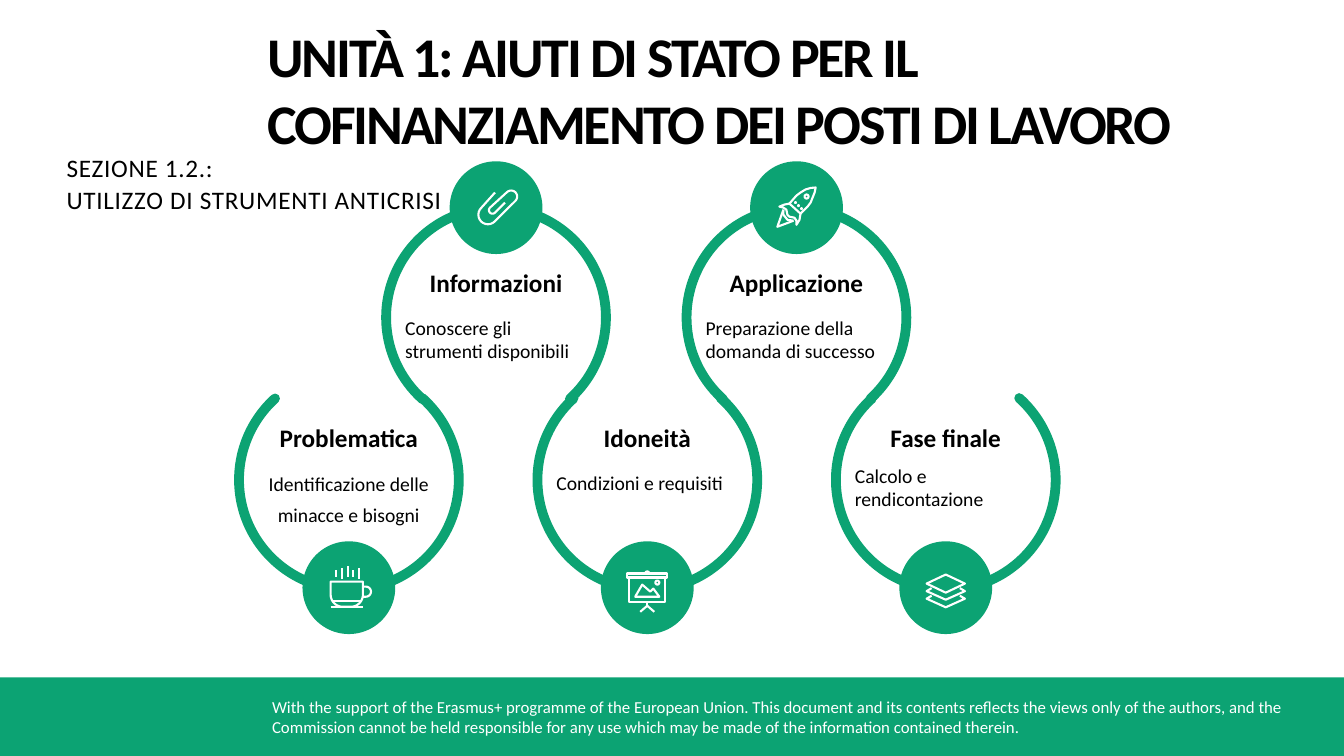
from math import cos, radians, sin

from lxml import etree
from pptx import Presentation
from pptx.dml.color import RGBColor
from pptx.enum.shapes import MSO_SHAPE
from pptx.enum.text import MSO_ANCHOR, MSO_AUTO_SIZE, PP_ALIGN
from pptx.oxml.ns import qn
from pptx.util import Inches, Pt

ARC, OVAL, RECT = MSO_SHAPE.ARC, MSO_SHAPE.OVAL, MSO_SHAPE.RECTANGLE
LEFT, MID = PP_ALIGN.LEFT, PP_ALIGN.CENTER
TOP, FIXED = MSO_ANCHOR.TOP, MSO_AUTO_SIZE.NONE
COL = {"green": "0CA373", "white": "FFFFFF", "black": "000000"}
HEAD = {"size": Pt(18), "bold": True}
NOTE = {"size": Pt(14), "bold": False}
FOOT = {"size": Pt(12), "bold": False}
TITLE = {"size": Pt(40), "bold": True}
PART = {"size": Pt(18), "bold": False}
ONE = {"alignment": LEFT, "line_spacing": 1.0}
CENTRE = {"alignment": MID, "line_spacing": 1.0}
LOOSE = {"alignment": MID, "line_spacing": Pt(22.2)}


def rgb(name):
    return RGBColor.from_string(COL[name])


def apply(item, values):
    for key, value in values.items():
        setattr(item, key, value)


def write(shape, lines, font, para, ink="black", track=0, gap=0):
    frame = shape.text_frame
    apply(frame, {"word_wrap": True, "auto_size": FIXED, "vertical_anchor": TOP})
    for num, line in enumerate(lines):
        par = frame.paragraphs[0] if num == 0 else frame.add_paragraph()
        props = par._p.get_or_add_pPr()
        props.set("marL", "0")
        props.set("indent", "0")
        etree.SubElement(props, qn("a:buNone"))
        apply(par, para)
        par.space_before = Pt(gap if num else 0)
        run = par.add_run()
        run.text = line
        apply(run.font, {"name": "Calibri", **font})
        run.font.color.rgb = rgb(ink)
        if track:
            run._r.get_or_add_rPr().set("spc", str(track))


def move(shape, left, top, width, height):
    apply(shape, {"left": Inches(left), "top": Inches(top),
                  "width": Inches(width), "height": Inches(height)})


def label(slide, left, top, width, height, lines, font, para, ink="black"):
    box = slide.shapes.add_textbox(
        Inches(left), Inches(top), Inches(width), Inches(height))
    write(box, lines, font, para, ink)


def solid(slide, kind, left, top, width, height):
    shape = slide.shapes.add_shape(
        kind, Inches(left), Inches(top), Inches(width), Inches(height))
    shape.shadow.inherit = False
    shape.fill.solid()
    shape.fill.fore_color.rgb = rgb("green")
    shape.line.fill.background()


def loop(slide, mid, top, turn):
    side = 2.18
    arc = slide.shapes.add_shape(
        ARC, Inches(mid - side / 2), Inches(top), Inches(side), Inches(side))
    arc.adjustments[0], arc.adjustments[1] = 79.14, 28.68
    arc.rotation = turn
    arc.shadow.inherit = False
    arc.fill.background()
    arc.line.color.rgb = rgb("green")
    arc.line.width = Pt(7)
    arc.line._get_or_add_ln().set("cap", "rnd")


def curve(mid_x, mid_y, radius, start, end, steps=12):
    angles = [radians(start + (end - start) * n / steps) for n in range(steps + 1)]
    return [(mid_x + radius * cos(a), mid_y + radius * sin(a)) for a in angles]


def ring(mid_x, mid_y, radius):
    return curve(mid_x, mid_y, radius, 0, 360)


def icon(slide, left, top, strokes):
    def place(point):
        return Inches(left + point[0] / 100), Inches(top + point[1] / 100)

    first = place(strokes[0][0])
    pen = slide.shapes.build_freeform(*first, scale=1.0)
    for num, stroke in enumerate(strokes):
        points = [place(point) for point in stroke]
        if num:
            pen.move_to(*points[0])
        pen.add_line_segments(points[1:], close=points[0] == points[-1])
    shape = pen.convert_to_shape()
    shape.shadow.inherit = False
    shape.fill.background()
    shape.line.color.rgb = rgb("white")
    shape.line.width = Pt(1.5)


def cup():
    bowl = [(1, 16), (33, 16), (33, 29), *curve(21, 29, 12, 0, 90),
            *curve(13, 29, 12, 90, 180), (1, 16)]
    grip = [(33, 21), *curve(36, 26, 5, -90, 90), (33, 31)]
    steam = [[(x, y), (x, end)] for x, y, end in
             ((6, 5, 11), (12, 3, 13), (18, 1, 11), (23, 5, 11), (29, 3, 13))]
    return [bowl, grip, [(1, 41), (33, 41)], [(3, 35), (31, 35)], *steam]


def clip():
    return [[(18, 3), *curve(11, 25, 9.5, 225, 45), *curve(34, 7, 6, 45, -135),
             *curve(15.5, 20.5, 3.5, 225, 45), (28, 13)]]


def board():
    return [[(1, 3), (41, 3), (41, 7), (1, 7), (1, 3)],
            [(3, 7), (3, 31), (39, 31), (39, 7)],
            curve(21, 3, 2, 180, 360), [(21, 31), (21, 35)],
            [(14, 41), (21, 35), (28, 41)],
            [(9, 26), (16, 14), (24, 21), (27, 18), (33, 26), (9, 26)],
            ring(31, 12, 2)]


def rocket():
    dots = [ring(20 + 3 * n, 16 + 3 * n, 0.4) for n in range(3)]
    return [[(14, 17), (21, 9), (25, 6), (30, 3), (35, 1.5), (40, 1), (39, 6),
             (37, 11), (35, 16), (32, 20), (25, 27), (14, 17)],
            [(14, 17), (9, 18), (4, 20), (8, 21), (11, 23), (12, 28),
             (14, 30), (19, 31), (21, 34), (21, 38), (24, 33), (25, 27)],
            [(8, 23), (2, 40), (18, 34)],
            [(8, 23), (8, 28), (12, 33), (18, 34)], ring(31, 10, 2), *dots]


def stack():
    sheets = [[(6, y), (1, y + 3), (20, y + 11.5), (39, y + 3), (34, y)]
              for y in (14.5, 22)]
    return [[(1, 10), (20, 1), (39, 10), (20, 19), (1, 10)], *sheets]


STEPS = [
    (3.46, False, "Problematica", ["Identificazione delle", "minacce e bisogni"],
     4.56, LOOSE, cup, (3.27, 5.61)),
    (4.92, True, "Informazioni", ["Conoscere gli strumenti disponibili"],
     3.08, ONE, clip, (4.73, 1.88)),
    (6.42, False, "Idoneità", ["Condizioni e requisiti"],
     4.62, ONE, board, (6.21, 5.66)),
    (7.9, True, "Applicazione", ["Preparazione della domanda di successo"],
     3.08, ONE, rocket, (7.69, 1.85)),
    (9.38, False, "Fase finale", ["Calcolo e rendicontazione"],
     4.55, ONE, stack, (9.18, 5.69)),
]


def step(slide, mid, high, name, lines, top, para, draw, spot):
    loop(slide, mid, 2.06 if high else 3.67, 0 if high else 180)
    solid(slide, OVAL, mid - 0.46, 1.6 if high else 5.37, 0.92, 0.92)
    icon(slide, *spot, draw())
    label(slide, mid - 1, 2.6 if high else 4.14, 2, 0.4, [name], HEAD, CENTRE)
    label(slide, mid - 1, top, 2, 0.75, lines, NOTE, para)


def main():
    deck = Presentation()
    deck.slide_width, deck.slide_height = Inches(13.33), Inches(7.5)
    slide = deck.slides.add_slide(deck.slide_layouts[1])
    title, part = slide.placeholders
    move(title, 2.65, 0.21, 9.1, 1.4)
    apply(title.text_frame, {"margin_left": 0, "margin_right": 0,
                             "margin_top": 0, "margin_bottom": 0})
    write(title, ["UNITÀ 1: AIUTI DI STATO PER IL COFINANZIAMENTO DEI POSTI DI LAVORO"],
          TITLE, ONE, track=-150)
    move(part, 0.56, 1.46, 6.66, 0.8)
    write(part, ["SEZIONE 1.2.:", "UTILIZZO DI STRUMENTI ANTICRISI"],
          PART, ONE, track=50, gap=1.1)
    solid(slide, RECT, 0, 6.72, 13.33, 0.78)
    label(slide, 2.6, 6.86, 10.42, 0.5, [
        "With the support of the Erasmus+ programme of the European Union. "
        "This document and its contents reflects the views only of the authors, "
        "and the Commission cannot be held responsible for any use which may be "
        "made of the information contained therein."], FOOT, ONE, "white")
    for item in STEPS:
        step(slide, *item)
    deck.save("out.pptx")


if __name__ == "__main__":
    main()
